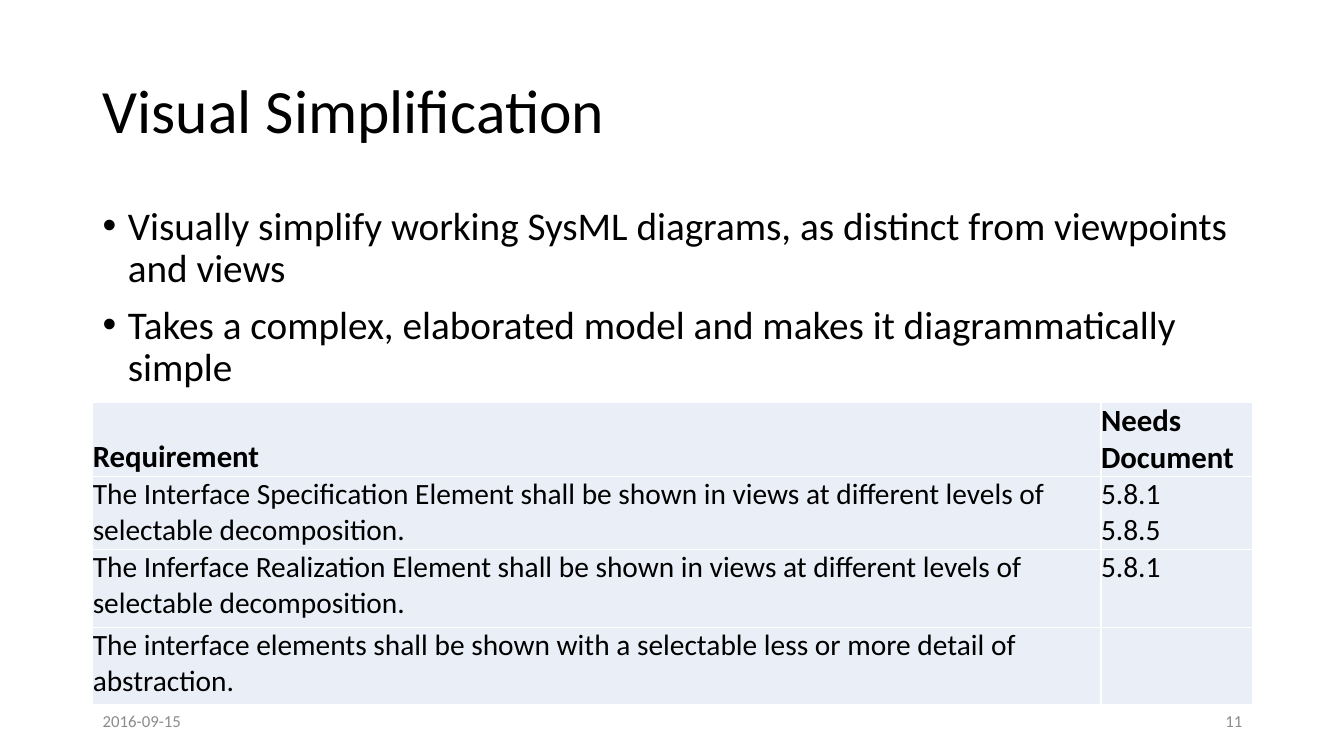
"""Build the Visual Simplification slide with bullets and a requirements table."""
from lxml.etree import SubElement
from pptx import Presentation
from pptx.dml.color import RGBColor
from pptx.enum.text import MSO_ANCHOR, PP_ALIGN
from pptx.oxml.ns import qn
from pptx.util import Inches, Pt

FONT = "Calibri"
BLACK, GREY, WHITE, PALE_BLUE = "000000", "8C8C8C", "FFFFFF", "EAEFF7"
TITLE = "Visual Simplification"
BULLETS = [
    "Visually simplify working SysML diagrams, as distinct from viewpoints and views",
    "Takes a complex, elaborated model and makes it diagrammatically simple",
]
REQUIREMENTS = [
    ("Requirement", "Needs Document"),
    ("The Interface Specification Element shall be shown in views at different levels of "
     "selectable decomposition.", "5.8.1\n5.8.5"),
    ("The Inferface Realization Element shall be shown in views at different levels of "
     "selectable decomposition.", "5.8.1"),
    ("The interface elements shall be shown with a selectable less or more detail of "
     "abstraction.", ""),
]
COLUMN_WIDTHS = [10, 1.5]
ROW_HEIGHTS = [0.73, 0.73, 0.77, 0.77]
LEFT, CONTENT_WIDTH = 0.92, sum(COLUMN_WIDTHS)
FOOTER_TOP, FOOTER_WIDTH, FOOTER_HEIGHT = 6.95, 3, 0.4
FOOTERS = [
    ("2016-09-15", LEFT, PP_ALIGN.LEFT),
    ("11", LEFT + CONTENT_WIDTH - FOOTER_WIDTH, PP_ALIGN.RIGHT),
]


def color(hex_string):
    return RGBColor.from_string(hex_string)


def write(paragraph, text, size, text_color=BLACK, bold=False, align=PP_ALIGN.LEFT):
    paragraph.text = text
    paragraph.alignment = align
    paragraph.font.name = FONT
    paragraph.font.size = Pt(size)
    paragraph.font.bold = bold
    paragraph.font.color.rgb = color(text_color)


def add_text_frame(slide, left, top, width, height):
    box = slide.shapes.add_textbox(Inches(left), Inches(top), Inches(width), Inches(height))
    box.text_frame.word_wrap = True
    return box.text_frame


def add_title(slide):
    title = slide.shapes.title
    title.left, title.top = Inches(LEFT), Inches(0.4)
    title.width, title.height = Inches(CONTENT_WIDTH), Inches(1.45)
    title.text_frame.vertical_anchor = MSO_ANCHOR.MIDDLE
    paragraph = title.text_frame.paragraphs[0]
    write(paragraph, TITLE, 44)
    paragraph.line_spacing = 0.9


def add_bullets(slide):
    frame = add_text_frame(slide, LEFT, 2, CONTENT_WIDTH, 4.76)
    for index, text in enumerate(BULLETS):
        paragraph = frame.add_paragraph() if index else frame.paragraphs[0]
        write(paragraph, text, 28)
        paragraph.line_spacing = 0.9
        paragraph.space_before = Pt(10)
        properties = paragraph._p.get_or_add_pPr()
        properties.set("marL", str(Inches(0.25)))
        properties.set("indent", str(Inches(-0.25)))
        bullet_font = properties.makeelement(qn("a:buFont"), {"typeface": "Arial"})
        bullet = properties.makeelement(qn("a:buChar"), {"char": "•"})
        spacing = properties.find(qn("a:spcBef"))
        spacing.addnext(bullet_font)
        bullet_font.addnext(bullet)


def add_borders(cell):
    properties = cell._tc.get_or_add_tcPr()
    for side in ("lnL", "lnR", "lnT", "lnB"):
        line = SubElement(properties, qn(f"a:{side}"), w=str(Pt(1)))
        fill = SubElement(line, qn("a:solidFill"))
        SubElement(fill, qn("a:srgbClr"), val=WHITE)


def add_requirements(slide):
    table = slide.shapes.add_table(
        len(REQUIREMENTS), len(COLUMN_WIDTHS), Inches(LEFT), Inches(3.99),
        Inches(CONTENT_WIDTH), Inches(sum(ROW_HEIGHTS))).table
    table.first_row = table.horz_banding = False
    for column, width in zip(table.columns, COLUMN_WIDTHS):
        column.width = Inches(width)
    for row_index, (row, height) in enumerate(zip(table.rows, ROW_HEIGHTS)):
        row.height = Inches(height)
        header = row_index == 0
        for cell, text in zip(row.cells, REQUIREMENTS[row_index]):
            add_borders(cell)
            cell.fill.solid()
            cell.fill.fore_color.rgb = color(PALE_BLUE)
            cell.margin_left = cell.margin_right = cell.margin_top = cell.margin_bottom = 0
            cell.vertical_anchor = MSO_ANCHOR.BOTTOM if header else MSO_ANCHOR.TOP
            write(cell.text_frame.paragraphs[0], text, 22 if header else 21, bold=header)


def add_footers(slide):
    for text, left, align in FOOTERS:
        frame = add_text_frame(slide, left, FOOTER_TOP, FOOTER_WIDTH, FOOTER_HEIGHT)
        frame.vertical_anchor = MSO_ANCHOR.MIDDLE
        write(frame.paragraphs[0], text, 12, GREY, align=align)


def main():
    presentation = Presentation()
    presentation.slide_width, presentation.slide_height = Inches(13.33), Inches(7.5)
    slide = presentation.slides.add_slide(presentation.slide_layouts[5])
    add_title(slide)
    add_bullets(slide)
    add_footers(slide)
    add_requirements(slide)
    presentation.save("out.pptx")


if __name__ == "__main__":
    main()
